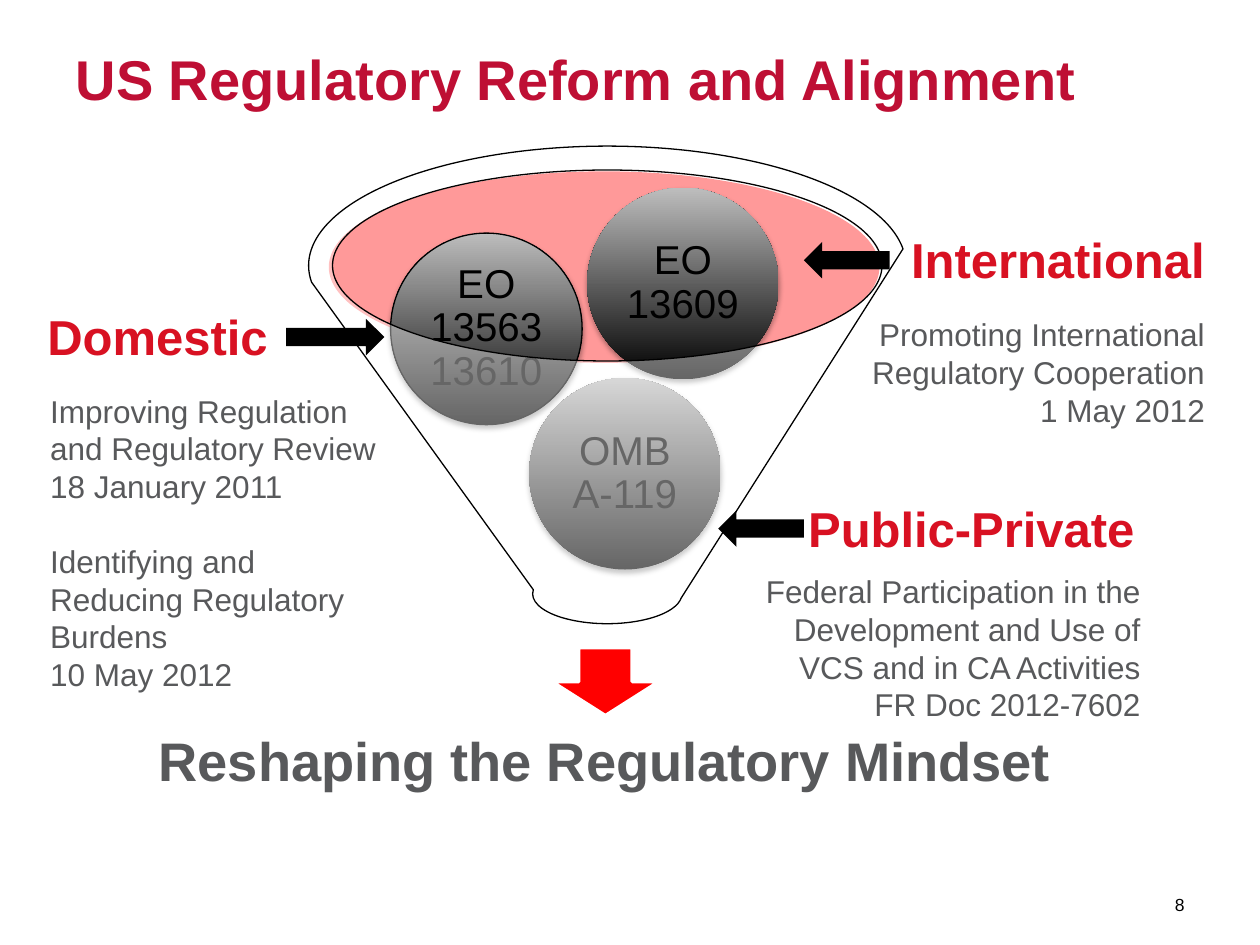
from lxml.etree import SubElement
from pptx import Presentation
from pptx.dml.color import RGBColor
from pptx.enum.shapes import MSO_SHAPE as Preset
from pptx.enum.text import MSO_ANCHOR as Anchor, MSO_AUTO_SIZE as AutoSize, PP_ALIGN as Align
from pptx.oxml.ns import qn
from pptx.util import Inches, Pt

COLUMNS, ROWS = 100, 75
WIDTH, HEIGHT = Inches(10), Inches(7.5)
COLORS = {
    "title": "BE0F34", "label": "D81122", "body": "58595B", "black": "000000",
    "silver": "BDBDBD", "red": "FF0000", "white": "FFFFFF",
}
TITLE = {"size": Pt(32), "bold": True, "color": "title"}
LABEL = {"size": Pt(28), "bold": True, "color": "label"}
BODY = {"size": Pt(18), "bold": False, "color": "body"}
BALL = {"size": Pt(23), "bold": False, "color": "black"}
OUTCOME = {"size": Pt(31), "bold": True, "color": "body"}
NUMBER = {"size": Pt(10), "bold": False, "color": "black"}
BALL_SIZE = 15.2
ARROW_ROWS = 2.9


def rgb(name):
    return RGBColor.from_string(COLORS[name])


def cells(left, top, width, height):
    """Turn grid columns and rows into lengths on the slide."""
    across, down = WIDTH / COLUMNS, HEIGHT / ROWS
    return [int(value) for value in (left * across, top * down, width * across, height * down)]


def set_frame(frame, inset=None, **values):
    """Set frame attributes, and the same inset (in inches) on every side."""
    if inset is not None:
        values.update({f"margin_{side}": Inches(inset) for side in ("left", "top", "right", "bottom")})
    for name, value in {"word_wrap": True, **values}.items():
        setattr(frame, name, value)


def write(frame, lines, style, align, spacing=1.0):
    for index, line in enumerate(lines):
        paragraph = frame.paragraphs[0] if index == 0 else frame.add_paragraph()
        paragraph.text = line
        paragraph.alignment = align
        paragraph.line_spacing = spacing
        font = paragraph.runs[0].font
        for name, value in {**style, "name": "Arial"}.items():
            if name == "color":
                font.color.rgb = rgb(value)
            else:
                setattr(font, name, value)


def add_text(slide, box, lines, style, align, spacing=1.0, **frame_values):
    frame = slide.shapes.add_textbox(*cells(*box)).text_frame
    set_frame(frame, **frame_values)
    write(frame, lines, style, align, spacing)
    return frame


def add_shape(slide, preset, box, fill, opacity=None, line=None, line_width=0.75):
    shape = slide.shapes.add_shape(preset, *cells(*box))
    shape.shadow.inherit = False
    shape.fill.solid()
    shape.fill.fore_color.rgb = rgb(fill)
    if opacity is not None:
        color = shape.fill._xPr.find(qn("a:solidFill"))[0]
        SubElement(color, qn("a:alpha"), val=str(opacity * 1000))
    set_line(shape, line, line_width)
    return shape


def set_line(shape, color, width=0.75):
    if color is None:
        shape.line.fill.background()
    else:
        shape.line.color.rgb = rgb(color)
        shape.line.width = Pt(width)


def add_ball(slide, left, top, text, line=None):
    """Add a shaded ball that goes into the funnel."""
    ball = add_shape(slide, Preset.OVAL, (left, top, BALL_SIZE, BALL_SIZE), "black", line=line)
    ball.fill.gradient()
    ball.fill.gradient_angle = 90
    for stop, color, position in zip(ball.fill.gradient_stops, ("black", "silver"), (0, 1)):
        stop.color.rgb = rgb(color)
        stop.position = position
    effects = ball._element.spPr.find(qn("a:effectLst"))
    shadow = SubElement(effects, qn("a:outerShdw"), blurRad=str(Pt(3.1)), dist=str(Pt(1.8)),
                        dir="5400000", rotWithShape="0")
    color = SubElement(shadow, qn("a:srgbClr"), val=COLORS["black"])
    SubElement(color, qn("a:alpha"), val="35000")
    set_frame(ball.text_frame, inset=0.03, vertical_anchor=Anchor.MIDDLE)
    write(ball.text_frame, [text], BALL, Align.CENTER, 0.9)


def add_title(slide, text):
    title = slide.shapes.title
    title.left, title.top, title.width, title.height = cells(5, 3, 90, 12.5)
    set_frame(title.text_frame, vertical_anchor=Anchor.TOP, auto_size=AutoSize.NONE)
    write(title.text_frame, [text], TITLE, Align.LEFT)


def add_funnel(slide):
    add_shape(slide, Preset.OVAL, (26.1, 13.6, 43.7, 15.2), "red", opacity=40)
    add_shape(slide, Preset.DOWN_ARROW, (43.8, 51.4, 8.5, 5.4), "red", line="white", line_width=2)
    add_text(slide, (10.1, 55.5, 75.7, 10.2), ["Reshaping the Regulatory Mindset"], OUTCOME,
             Align.CENTER, 0.9, inset=0.24, vertical_anchor=Anchor.MIDDLE)
    add_ball(slide, 42, 30, "OMB A-119")
    add_ball(slide, 31, 18.5, "EO 13563 13610", line="black")
    add_ball(slide, 46.6, 14.9, "EO 13609")
    add_shape(slide, Preset.FUNNEL, (24.5, 11.6, 47.4, 37.9), "white", opacity=40, line="black")


def add_source(slide, label, label_box, align, arrow, arrow_box, lines, lines_box, lines_align):
    """Add a red label, its arrow to the funnel, and the lines that explain it."""
    add_text(slide, label_box, [label], LABEL, align)
    add_shape(slide, arrow, (*arrow_box, ARROW_ROWS), "black")
    return add_text(slide, lines_box, lines, BODY, lines_align)


def main():
    presentation = Presentation()
    presentation.slide_width, presentation.slide_height = WIDTH, HEIGHT
    slide = presentation.slides.add_slide(presentation.slide_layouts[5])

    add_title(slide, "US Regulatory Reform and Alignment")
    add_text(slide, (88, 69.8, 7, 4), ["8"], NUMBER, Align.RIGHT, vertical_anchor=Anchor.MIDDLE)
    add_funnel(slide)

    domestic = add_source(
        slide, "Domestic", (0, 23.8, 25, 5.7), Align.CENTER,
        Preset.RIGHT_ARROW, (22.7, 25.3, 7.8),
        ["Improving Regulation and Regulatory Review", "18 January 2011",
         "Identifying and Reducing Regulatory Burdens", "10 May 2012"],
        (3, 30.6, 28.1, 28.3), Align.LEFT)
    domestic.paragraphs[2].space_before = Pt(21)
    add_source(
        slide, "Public-Private", (61.1, 39.1, 32, 5.7), Align.CENTER,
        Preset.LEFT_ARROW, (57, 40.5, 6.8),
        ["Federal Participation in the Development and Use of VCS and in CA Activities",
         "FR Doc 2012-7602"],
        (57, 44.9, 34.5, 13.1), Align.RIGHT)
    add_source(
        slide, "International", (64.6, 17.7, 32, 5.7), Align.RIGHT,
        Preset.LEFT_ARROW, (63.8, 19.2, 6.8),
        ["Promoting International Regulatory Cooperation", "1 May 2012"],
        (67.7, 24.5, 28.9, 10.1), Align.RIGHT)

    presentation.save("out.pptx")


if __name__ == "__main__":
    main()
